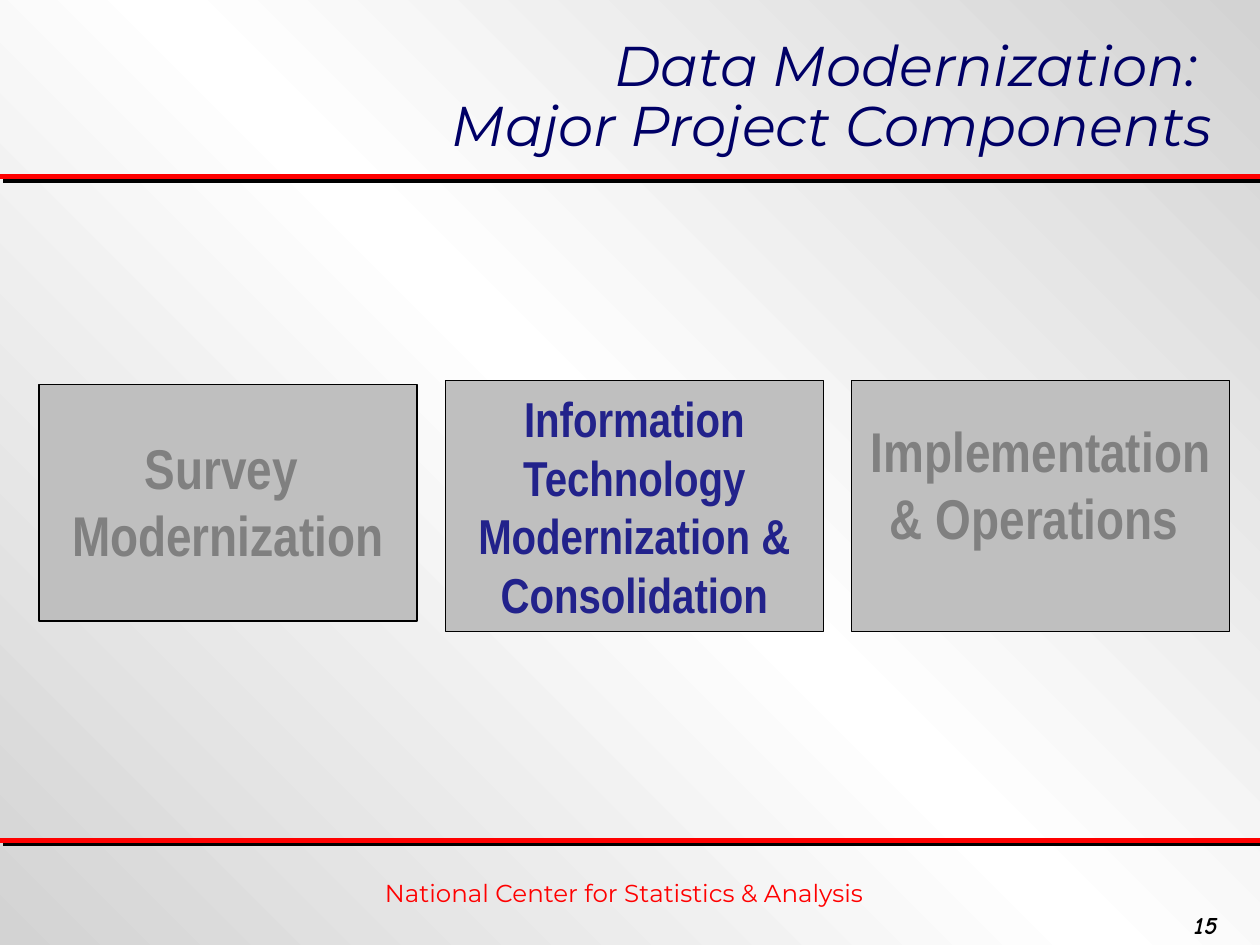
from dataclasses import dataclass

import lxml.etree
import pptx
import pptx.dml.color
import pptx.enum.shapes
import pptx.enum.text
import pptx.oxml.ns
import pptx.util

Inches = pptx.util.Inches
Pt = pptx.util.Pt
RGBColor = pptx.dml.color.RGBColor
Align = pptx.enum.text.PP_ALIGN
Anchor = pptx.enum.text.MSO_ANCHOR
qn = pptx.oxml.ns.qn

RED = RGBColor(0xFF, 0x00, 0x00)
BLACK = RGBColor(0x00, 0x00, 0x00)
TITLE_NAVY = RGBColor(0x00, 0x00, 0x66)
FOCUS_BLUE = RGBColor(0x22, 0x22, 0x8B)
MUTED_GRAY = RGBColor(0x80, 0x80, 0x80)
PANEL_GRAY = RGBColor(0xBF, 0xBF, 0xBF)
EDGE_GRAY = RGBColor(0xD3, 0xD3, 0xD3)
WHITE = RGBColor(0xFF, 0xFF, 0xFF)

PANEL_LEFT, PANEL_STEP, PANEL_WIDTH = 0.31, 3.225, 3


@dataclass
class Style:
    font: dict
    color: RGBColor
    align: Align = Align.LEFT
    anchor: Anchor = Anchor.TOP
    line_spacing: float = 1.0


@dataclass
class Label:
    text: str
    left: float
    top: float
    width: float
    height: float
    style: Style


@dataclass
class Panel:
    text: str
    top: float
    height: float
    size: int
    color: RGBColor
    bottom_inset: float = 0.05


LABELS = [
    Label("Data Modernization: \vMajor Project Components", 0.35, 0.25, 9.37, 1.06,
          Style({"name": "Montserrat", "size": Pt(32), "italic": True},
                TITLE_NAVY, Align.RIGHT, Anchor.MIDDLE, 0.9)),
    Label("National Center for Statistics & Analysis", 0.58, 6.92, 8.75, 0.33,
          Style({"name": "Montserrat", "size": Pt(14)}, RED, Align.CENTER)),
    Label("15", 9.38, 7.17, 0.96, 0.33,
          Style({"name": "Comic Neue", "size": Pt(14), "bold": True, "italic": True}, BLACK)),
]

PANELS = [
    Panel("Survey \nModernization", 3.05, 1.88, 32, MUTED_GRAY, 0.08),
    Panel("Information Technology Modernization & Consolidation", 3.02, 1.99, 28, FOCUS_BLUE),
    Panel("Implementation & Operations ", 3.02, 1.99, 32, MUTED_GRAY, 0.4),
]


def write_text(box, text: str, style: Style, bottom_inset: float = 0.05) -> None:
    frame = box.text_frame
    frame.word_wrap = True
    frame.vertical_anchor = style.anchor
    frame.margin_bottom = Inches(bottom_inset)
    frame.text = text
    for para in frame.paragraphs:
        para.alignment = style.align
        para.line_spacing = style.line_spacing
        for span in para.runs:
            for name, value in style.font.items():
                setattr(span.font, name, value)
            span.font.color.rgb = style.color


def add_label(page, label: Label) -> None:
    box = page.shapes.add_textbox(Inches(label.left), Inches(label.top),
                                  Inches(label.width), Inches(label.height))
    write_text(box, label.text, label.style)


def add_panel(page, panel: Panel, column: int) -> None:
    box = page.shapes.add_shape(
        pptx.enum.shapes.MSO_SHAPE.RECTANGLE,
        Inches(PANEL_LEFT + column * PANEL_STEP), Inches(panel.top),
        Inches(PANEL_WIDTH), Inches(panel.height))
    box.shadow.inherit = False
    box.fill.solid()
    box.fill.fore_color.rgb = PANEL_GRAY
    box.line.color.rgb = BLACK
    box.line.width = Pt(0.75)
    font = {"name": "Arial Narrow", "size": Pt(panel.size), "bold": True}
    write_text(box, panel.text, Style(font, panel.color, Align.CENTER, Anchor.MIDDLE),
               panel.bottom_inset)


def add_rule(page, top: float) -> None:
    rule = page.shapes.add_connector(pptx.enum.shapes.MSO_CONNECTOR.STRAIGHT,
                                     Inches(0), Inches(top), Inches(10), Inches(top))
    rule.line.color.rgb = RED
    rule.line.width = Pt(3)
    properties = rule._element.find(qn("p:spPr"))
    effects = lxml.etree.SubElement(properties, qn("a:effectLst"))
    shadow = lxml.etree.SubElement(effects, qn("a:outerShdw"), dist=str(Pt(2.8)),
                                   dir="2700000", algn="ctr", rotWithShape="0")
    lxml.etree.SubElement(shadow, qn("a:srgbClr"), val=str(BLACK))


def paint_background(page) -> None:
    fill = page.background.fill
    fill.gradient()
    fill.gradient_angle = 45
    stops = page.element.find(".//" + qn("a:gsLst"))
    for stop in list(stops):
        stops.remove(stop)
    for percent, color in ((0, EDGE_GRAY), (50, WHITE), (100, EDGE_GRAY)):
        stop = lxml.etree.SubElement(stops, qn("a:gs"), pos=str(percent * 1000))
        lxml.etree.SubElement(stop, qn("a:srgbClr"), val=str(color))


def main() -> None:
    deck = pptx.Presentation()
    deck.slide_width = Inches(10)
    deck.slide_height = Inches(7.5)
    page = deck.slides.add_slide(deck.slide_layouts[6])
    paint_background(page)
    for top in (1.4, 6.67):
        add_rule(page, top)
    for label in LABELS:
        add_label(page, label)
    for column, panel in enumerate(PANELS):
        add_panel(page, panel, column)
    deck.save("out.pptx")


if __name__ == "__main__":
    main()
